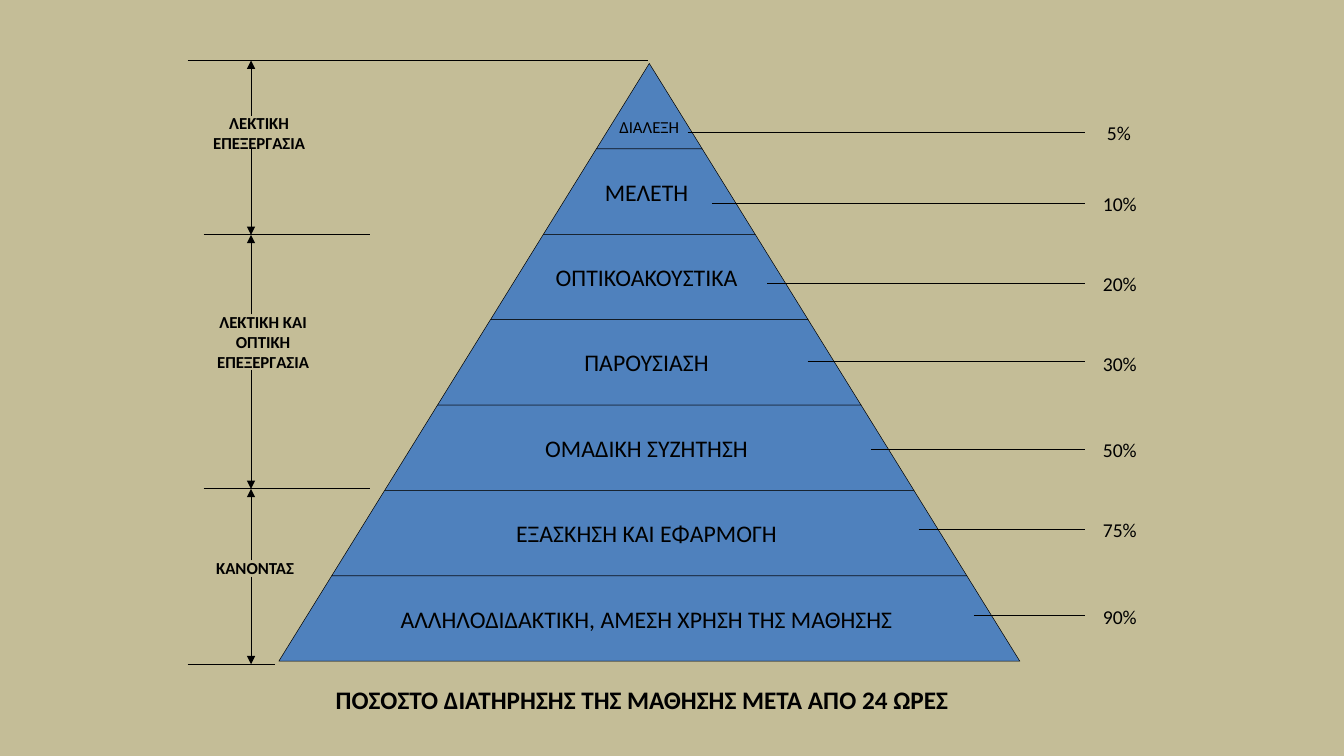
from pptx import Presentation, util as u
from pptx.dml.color import RGBColor
from pptx.enum import shapes, text
from pptx.oxml.ns import qn
from lxml import etree

HUES = {"back": "C4BD97", "band": "4F81BD", "ink": "000000"}
BANDS = [
    "ΔΙΑΛΕΞΗ", "ΜΕΛΕΤΗ ", "ΟΠΤΙΚΟΑΚΟΥΣΤΙΚΑ ", "ΠΑΡΟΥΣΙΑΣΗ ",
    "ΟΜΑΔΙΚΗ ΣΥΖΗΤΗΣΗ ", "ΕΞΑΣΚΗΣΗ ΚΑΙ ΕΦΑΡΜΟΓΗ ",
    "ΑΛΛΗΛΟΔΙΔΑΚΤΙΚΗ, ΑΜΕΣΗ ΧΡΗΣΗ ΤΗΣ ΜΑΘΗΣΗΣ ",
]
RATES = [
    ("5%", 6.82, 1.31, 10.88, 1.15), ("10%", 7.06, 2.02, 10.84, 1.86),
    ("20%", 7.61, 2.81, 10.84, 2.65), ("30%", 8.01, 3.59, 10.84, 3.44),
    ("50%", 8.64, 4.46, 10.84, 4.3), ("75%", 9.11, 5.25, 10.84, 5.09),
    ("90%", 9.66, 6.11, 10.84, 5.95),
]
RULES = [(1.86, 6.43, 0.6), (2.02, 3.67, 2.33),
         (2.02, 3.67, 4.85), (1.86, 2.73, 6.59)]
STAGES = [
    ("ΛΕΚΤΙΚΗ ΕΠΕΞΕΡΓΑΣΙΑ", (1.86, 1.07, 1.42, 0.5)),
    ("ΛΕΚΤΙΚΗ ΚΑΙ ΟΠΤΙΚΗ ΕΠΕΞΕΡΓΑΣΙΑ", (1.86, 3.04, 1.5, 0.71)),
    ("ΚΑΝΟΝΤΑΣ", (1.94, 5.48, 1.18, 0.3)),
]
ARROWS = [(1.15, 0.6), (1.47, 2.33), (3.12, 2.33),
          (3.67, 4.85), (5.56, 4.85), (5.72, 6.59)]
AXIS, TOP, STEP, HALF = 6.44, 0.63, 5.93 / 7, 0.525


class Deck:
    """Holds the style and the current slide, and draws each kind of element."""

    def __init__(self):
        self.prs = Presentation()
        self.prs.slide_width = u.Inches(13.33)
        self.prs.slide_height = u.Inches(7.5)
        self.slide = self.prs.slides.add_slide(self.prs.slide_layouts[5])
        self.paint(self.slide.background.fill, "back")

    def paint(self, fill, hue):
        fill.solid()
        fill.fore_color.rgb = RGBColor.from_string(HUES[hue])

    def letter(self, frame, words, size, bold=False, align=text.PP_ALIGN.CENTER):
        frame.text = words
        par = frame.paragraphs[0]
        par.alignment = align
        par.space_before = u.Pt(0)
        font = par.runs[0].font
        font.name, font.size, font.bold = "Calibri", u.Pt(size), bold
        font.color.rgb = RGBColor.from_string(HUES["ink"])

    def title(self, words, box):
        head = self.slide.shapes.title
        head.left, head.top, head.width, head.height = map(u.Inches, box)
        head.text_frame.word_wrap = True
        head.text_frame.auto_size = text.MSO_AUTO_SIZE.NONE
        self.letter(head.text_frame, words, 18, True)

    def label(self, words, box, size, **style):
        shape = self.slide.shapes.add_textbox(*map(u.Inches, box))
        shape.text_frame.word_wrap = True
        self.letter(shape.text_frame, words, size, **style)

    def line(self, x1, y1, x2, y2, arrow=False):
        ends = map(u.Inches, (x1, y1, x2, y2))
        link = self.slide.shapes.add_connector(shapes.MSO_CONNECTOR.STRAIGHT, *ends)
        self.paint(link.line.fill, "ink")
        link.line.width = u.Pt(0.75)
        props = link._element.spPr
        if arrow:
            etree.SubElement(props.find(qn("a:ln")), qn("a:tailEnd"), type="triangle")
        etree.SubElement(props, qn("a:effectLst"))

    def band(self, words, row):
        top, low = TOP + row * STEP, TOP + (row + 1) * STEP
        near, far = row * HALF, (row + 1) * HALF
        dots = [(AXIS - far, low), (AXIS - near, top),
                (AXIS + near, top), (AXIS + far, low)]
        dots = [(u.Inches(x), u.Inches(y)) for x, y in dots]
        edge = self.slide.shapes.build_freeform(*dots[0], scale=1.0)
        edge.add_line_segments(dots[1:], close=True)
        shape = edge.convert_to_shape()
        shape.shadow.inherit = False
        self.paint(shape.fill, "band")
        self.paint(shape.line.fill, "ink")
        shape.line.width = u.Pt(0.37)
        frame = shape.text_frame
        frame.margin_left = frame.margin_right = 0
        frame.margin_top = frame.margin_bottom = 0
        frame.word_wrap = False
        frame.vertical_anchor = text.MSO_ANCHOR.MIDDLE
        if row == 0:
            frame.vertical_anchor = text.MSO_ANCHOR.BOTTOM
            frame.margin_bottom = u.Inches(0.12)
        self.letter(frame, words, 17 if row else 12)


def main():
    deck = Deck()
    for row, words in enumerate(BANDS):
        deck.band(words, row)
    deck.title("ΠΟΣΟΣΤΟ ΔΙΑΤΗΡΗΣΗΣ ΤΗΣ ΜΑΘΗΣΗΣ ΜΕΤΑ ΑΠΌ 24 ΩΡΕΣ ",
               (2.18, 6.74, 8.43, 0.4))
    for left, right, y in RULES:
        deck.line(left, y, right, y)
    for start, end in ARROWS:
        deck.line(2.49, start, 2.49, end, arrow=True)
    for words, box in STAGES:
        deck.label(words, box, 12, bold=True)
    for rate, start, y, left, top in RATES:
        deck.line(start, y, 10.76, y)
        deck.label(rate, (left, top, 0.63, 0.34), 14, align=text.PP_ALIGN.LEFT)
    deck.prs.save("out.pptx")


if __name__ == "__main__":
    main()
